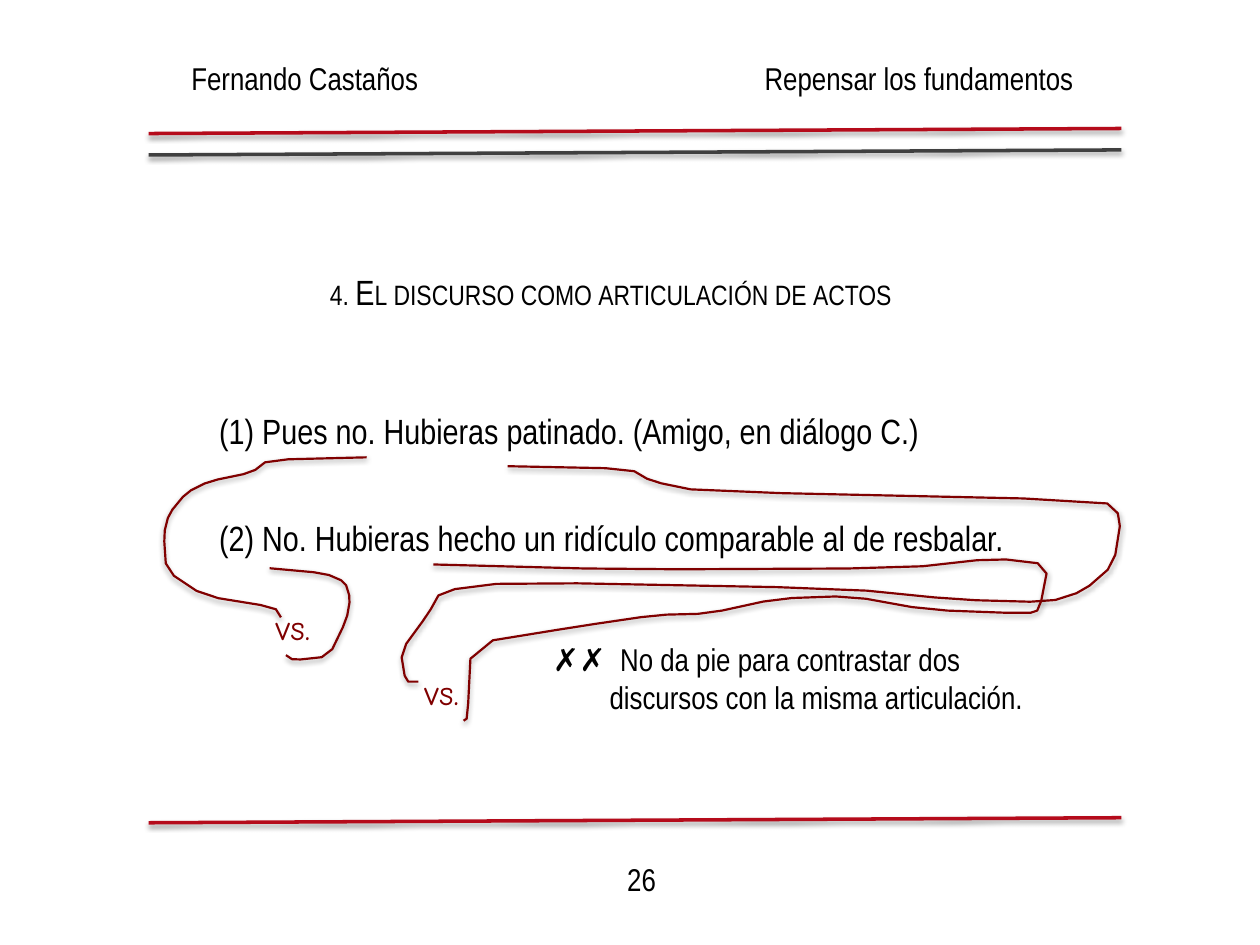
from itertools import pairwise
from lxml.etree import SubElement
from pptx import Presentation
from pptx.dml.color import RGBColor
from pptx.enum.shapes import MSO_CONNECTOR
from pptx.enum.text import MSO_AUTO_SIZE
from pptx.oxml.ns import qn
from pptx.util import Inches, Pt

COLORS = {"red": "B50B1B", "gray": "404040", "maroon": "800000", "black": "000000"}
BODY, HAND = "Arial Narrow", "Comic Neue"

STROKES = [
    [(2.91, 3.63), (2.13, 3.65), (2, 3.75), (1.66, 3.82), (1.48, 3.91), (1.34, 4.08),
     (1.3, 4.24), (1.32, 4.53), (1.62, 4.73), (2.18, 4.82), (2.23, 4.9)],
    [(2.14, 4.51), (2.58, 4.55), (2.74, 4.62), (2.78, 4.75), (2.75, 4.92),
     (2.61, 5.21), (2.33, 5.24), (2.27, 5.2)],
    [(4.03, 3.7), (5, 3.72), (5.17, 3.82), (5.56, 3.9), (8.76, 3.97), (8.9, 4.1),
     (8.84, 4.48), (8.6, 4.69), (8.32, 4.78), (7.6, 4.76), (6.7, 4.67),
     (4.05, 4.62), (3.5, 4.69), (3.4, 4.87), (3.18, 5.17), (3.22, 5.41), (3.32, 5.41)],
    [(3.44, 4.48), (4.94, 4.52), (7.18, 4.51), (7.9, 4.43), (8.32, 4.48),
     (8.25, 4.84), (8.16, 4.87), (7.36, 4.84), (6.75, 4.73), (6.17, 4.75),
     (5.62, 4.87), (5.21, 4.88), (4.6, 4.97), (3.74, 5.11), (3.71, 5.7), (3.68, 5.72)],
]


def rgb(name):
    """Return the named colour."""
    return RGBColor.from_string(COLORS[name])


def style_line(sp, color, width):
    """Set line colour and width, and put a soft shadow below the line."""
    sp.line.color.rgb = rgb(color)
    sp.line.width = Pt(width)
    effects = SubElement(sp._element.spPr, qn("a:effectLst"))
    shadow = SubElement(effects, qn("a:outerShdw"), blurRad=str(Pt(3.1)),
                        dist=str(Pt(1.6)), dir="5400000", rotWithShape="0")
    black = SubElement(shadow, qn("a:srgbClr"), val=COLORS["black"])
    SubElement(black, qn("a:alpha"), val="38000")


def add_rule(s, y, color):
    """Draw one slightly rising rule across the slide."""
    ends = (Inches(v) for v in (1.18, y, 8.9, y - 0.04))
    style_line(s.shapes.add_connector(MSO_CONNECTOR.STRAIGHT, *ends), color, 2)


def round_corners(points):
    """Cut every corner, keeping both ends."""
    cut = [(a[0] + (b[0] - a[0]) * t, a[1] + (b[1] - a[1]) * t)
           for a, b in pairwise(points) for t in (0.2, 0.8)]
    return [points[0], *cut, points[-1]]


def add_stroke(s, points):
    """Draw an open hand-drawn stroke through the points."""
    start, *rest = [(Inches(x), Inches(y)) for x, y in round_corners(points)]
    builder = s.shapes.build_freeform(*start)
    builder.add_line_segments(rest, close=False)
    sp = builder.convert_to_shape()
    sp.fill.background()
    style_line(sp, "maroon", 1.25)


def add_text(s, box, lines, size=20, font=BODY, color="black", wrap=False,
             gap=0, indent=0, small_caps=False):
    """Add a text box, indenting every paragraph after the first."""
    tf = s.shapes.add_textbox(*(Inches(v) for v in box)).text_frame
    tf.word_wrap = wrap
    tf.auto_size = MSO_AUTO_SIZE.SHAPE_TO_FIT_TEXT
    for i, line in enumerate(lines):
        p = tf.paragraphs[0] if i == 0 else tf.add_paragraph()
        p.space_before = Pt(gap if i else 0)
        if i and indent:
            p._p.get_or_add_pPr().set("marL", str(Inches(indent)))
        r = p.add_run()
        r.text = line
        for name, value in {"size": Pt(size), "name": font}.items():
            setattr(r.font, name, value)
        r.font.color.rgb = rgb(color)
        if small_caps:
            r._r.get_or_add_rPr().set("cap", "small")


def main():
    """Build the slide and save it."""
    prs = Presentation()
    prs.slide_width, prs.slide_height = Inches(10), Inches(7.5)
    s = prs.slides.add_slide(prs.slide_layouts[6])
    for y, color in ((1.06, "red"), (1.23, "gray"), (6.53, "red")):
        add_rule(s, y, color)
    for points in STROKES:
        add_stroke(s, points)
    add_text(s, (1.42, 0.42, 2.02, 0.71), ["Fernando Castaños"], size=18)
    add_text(s, (5.97, 0.42, 2.68, 0.71), ["Repensar los fundamentos"], size=18)
    add_text(s, (4.88, 6.78, 0.43, 0.4), ["26"], size=18)
    add_text(s, (2.52, 2.1, 4.83, 0.44),
             ["4. El discurso como articulación de actos"], small_caps=True)
    add_text(s, (1.64, 3.2, 6.84, 1.28),
             ["(1) Pues no. Hubieras patinado. (Amigo, en diálogo C.)",
              "(2) No. Hubieras hecho un ridículo comparable al de resbalar."],
             wrap=True, gap=37)
    add_text(s, (4.29, 5.03, 4.2, 0.71),
             ["✗✗  No da pie para contrastar dos",
              "discursos con la misma articulación."],
             size=18, wrap=True, indent=0.45)
    for x, y in ((2.09, 4.76), (3.27, 5.27)):
        add_text(s, (x, y, 0.74, 0.44), ["vs."], font=HAND, color="maroon")
    prs.save("out.pptx")


if __name__ == "__main__":
    main()
